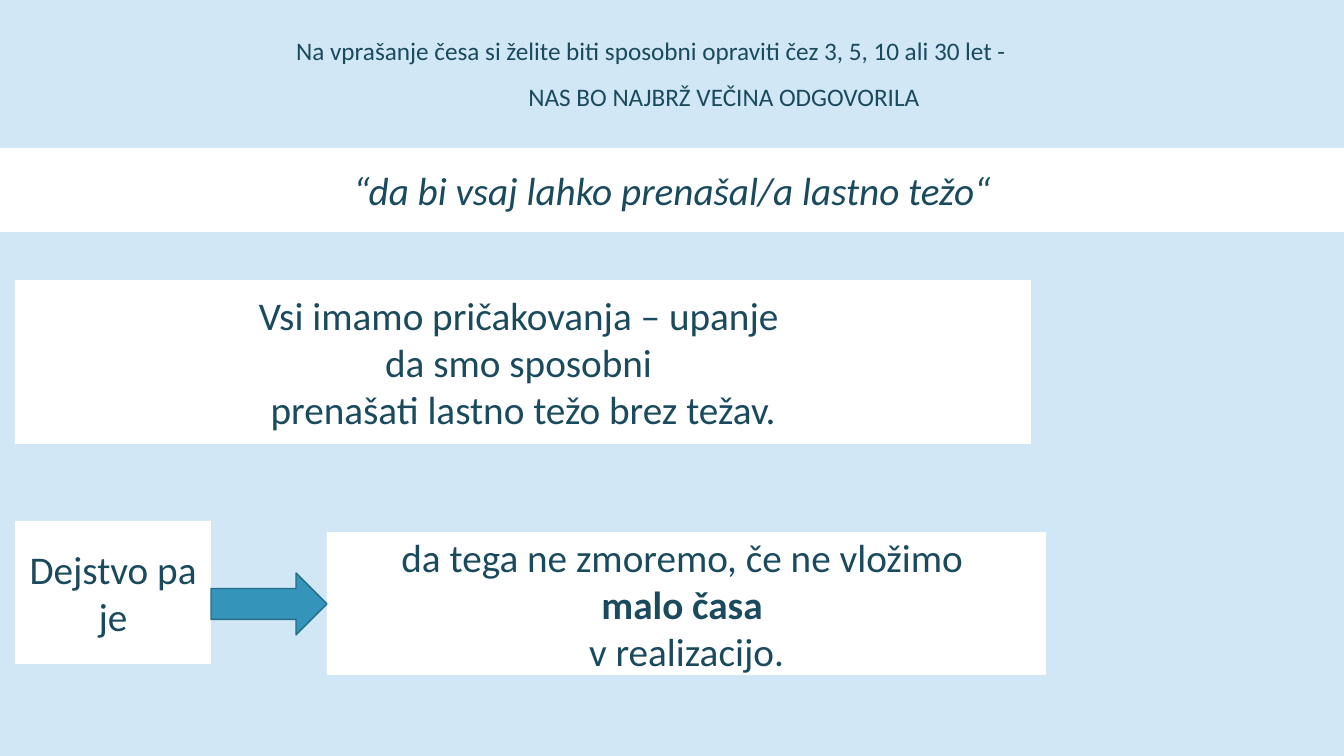
import pptx
import pptx.util
import pptx.dml.color
import pptx.enum.shapes
import pptx.enum.text

RGBColor = pptx.dml.color.RGBColor
SHAPE = pptx.enum.shapes.MSO_SHAPE
ANCHOR = pptx.enum.text.MSO_ANCHOR
ALIGN = pptx.enum.text.PP_ALIGN

SKY = RGBColor(0xD1, 0xE7, 0xF6)
WHITE = RGBColor(0xFF, 0xFF, 0xFF)
INK = RGBColor(0x1A, 0x4A, 0x5D)
BLUE = RGBColor(0x34, 0x94, 0xBA)
EDGE = RGBColor(0x26, 0x6D, 0x8A)

WIDTH, HEIGHT = 1344, 756
SCALE = 914400 / 100.8


def px(*sizes):
    return [pptx.util.Emu(round(size * SCALE)) for size in sizes]


def write(shape, *lines, size=28, italic=False, bold=(), anchor=ANCHOR.MIDDLE):
    """Fill the shape with centred lines; bold holds the indexes of bold ones."""
    frame = shape.text_frame
    frame.word_wrap = True
    frame.vertical_anchor = anchor
    for index, line in enumerate(lines):
        para = frame.add_paragraph() if index else frame.paragraphs[0]
        para.alignment = ALIGN.CENTER
        run = para.add_run()
        run.text = line
        font = run.font
        font.name = "Calibri"
        font.size = pptx.util.Pt(size)
        font.color.rgb = INK
        font.italic = italic
        font.bold = index in bold


def draw(slide, kind, box, fill, edge=None):
    shape = slide.shapes.add_shape(kind, *px(*box))
    shape.shadow.inherit = False
    shape.fill.solid()
    shape.fill.fore_color.rgb = fill
    if edge is None:
        shape.line.fill.background()
    else:
        shape.line.color.rgb = edge
        shape.line.width = pptx.util.Pt(1)
    return shape


def panel(slide, box, *lines, **style):
    write(draw(slide, SHAPE.RECTANGLE, box, WHITE), *lines, **style)


def intro(slide, left, top, width, height):
    """Two question lines, the second one stepped down and to the right."""
    lines = (
        "Na vprašanje česa si želite biti sposobni opraviti čez 3, 5, 10 ali 30 let - ",
        "NAS BO NAJBRŽ VEČINA ODGOVORILA",
    )
    step = 70
    for index, line in enumerate(lines):
        box = left + index * step, top + index * 46, width - step, height - 46
        label = slide.shapes.add_textbox(*px(*box))
        write(label, line, size=18, anchor=ANCHOR.TOP)


def outcome(slide, left, top, width, height):
    """The fact, an arrow and what follows from it."""
    fact, gap, drop = 196, 116, 11
    tall = height - drop
    start = left + fact + gap
    panel(slide, (left, top, fact, tall), "Dejstvo pa je")
    panel(slide, (start, top + drop, width - fact - gap, tall),
          "da tega ne zmoremo, če ne vložimo ", "malo časa ", "v realizacijo.",
          bold=(1,))
    draw(slide, SHAPE.RIGHT_ARROW, (left + fact, top + 52, gap, 62), BLUE, EDGE)


def main():
    deck = pptx.Presentation()
    deck.slide_width, deck.slide_height = px(WIDTH, HEIGHT)
    slide = deck.slides.add_slide(deck.slide_layouts[6])
    slide.background.fill.solid()
    slide.background.fill.fore_color.rgb = SKY

    intro(slide, 163, 30, 1052, 86)
    panel(slide, (0, 148, WIDTH, 84),
          "“da bi vsaj lahko prenašal/a lastno težo“", italic=True)
    panel(slide, (15, 280, 1016, 164),
          "Vsi imamo pričakovanja – upanje ", "da smo sposobni ",
          "prenašati lastno težo brez težav.")
    outcome(slide, 15, 521, 1031, 154)
    deck.save("out.pptx")


if __name__ == "__main__":
    main()
